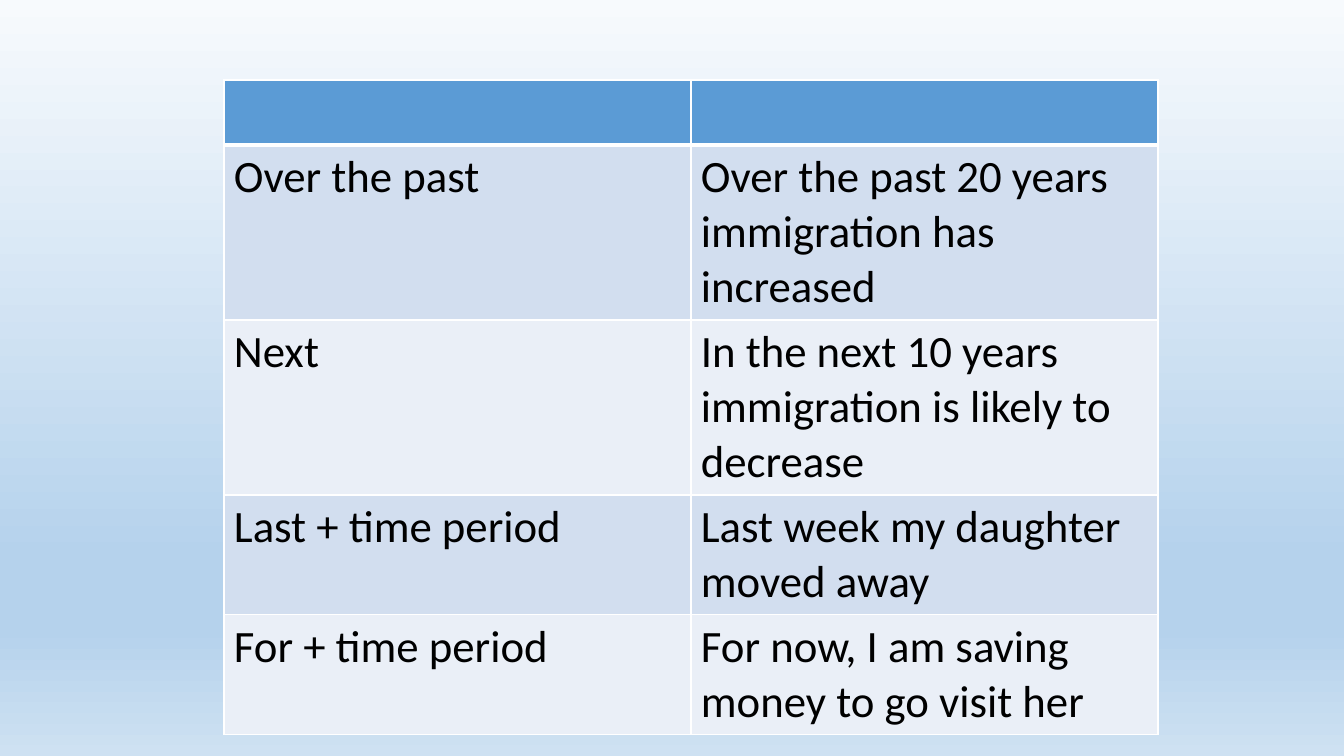
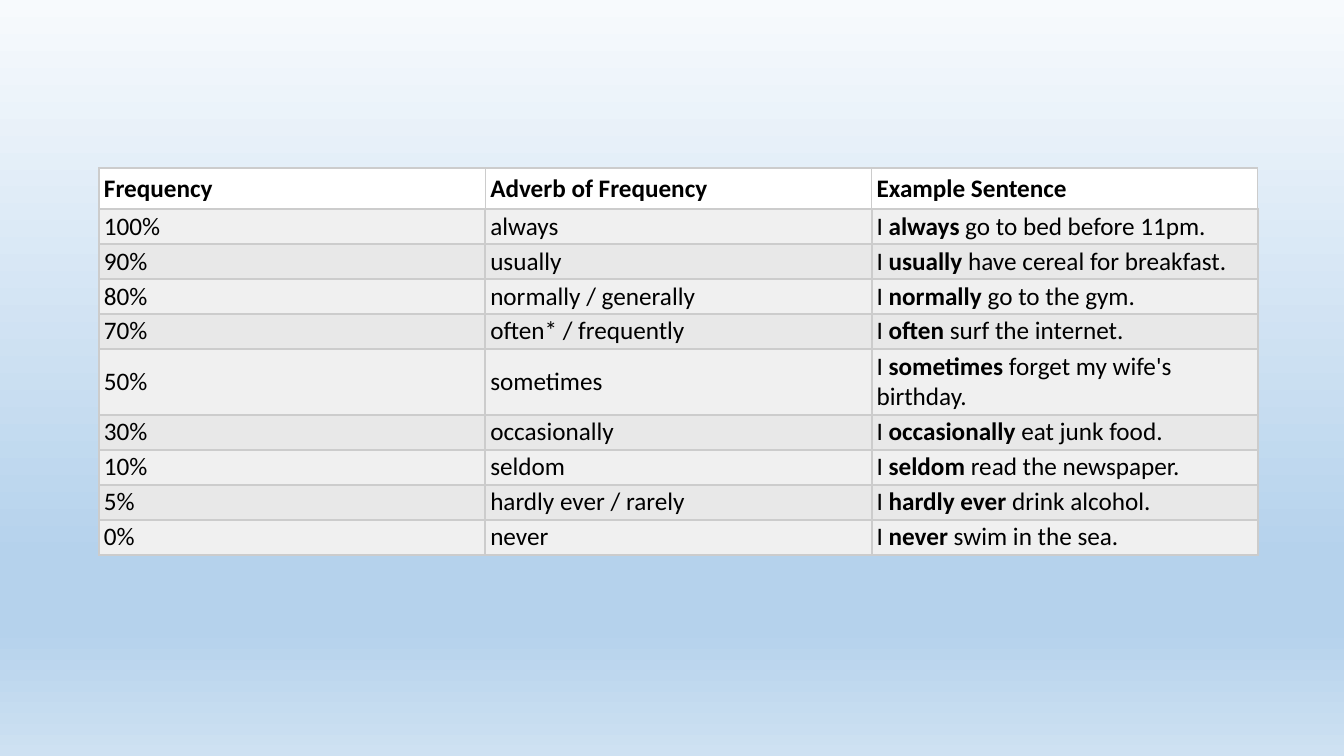
from lxml.etree import SubElement
from pptx import Presentation
from pptx.dml.color import RGBColor
from pptx.enum.text import MSO_ANCHOR
from pptx.oxml.ns import qn
from pptx.util import Emu, Pt

PX = 914400 / 100.8
FONT = "Calibri"
COLORS = {
    "text": "000000",
    "white": "FFFFFF",
    "blue": "5B9BD5",
    "blue_band": "D2DEEF",
    "blue_pale": "EAEFF7",
    "grid": "CCCCCC",
    "gray_pale": "F0F0F0",
    "gray_band": "E8E8E8",
}
BACKGROUND_STOPS = [(0, "F7FAFD"), (74, "B5D2EC"), (83, "B5D2EC"), (100, "CEE1F2")]

TIME_ROWS = [
    ("", ""),
    ("Over the past", "Over the past 20 years immigration has increased"),
    ("Next", "In the next 10 years immigration is likely to decrease"),
    ("Last + time period", "Last week my daughter moved away"),
    ("For + time period", "For now, I am saving money to go visit her"),
]
# Text between bars is bold.
FREQUENCY_ROWS = [
    ("Frequency", "Adverb of Frequency", "Example Sentence"),
    ("100%", "always", "I |always| go to bed before 11pm."),
    ("90%", "usually", "I |usually| have cereal for breakfast."),
    ("80%", "normally / generally", "I |normally| go to the gym."),
    ("70%", "often* / frequently", "I |often| surf the internet."),
    ("50%", "sometimes", "I |sometimes| forget my wife's birthday."),
    ("30%", "occasionally", "I |occasionally| eat junk food."),
    ("10%", "seldom", "I |seldom| read the newspaper."),
    ("5%", "hardly ever / rarely", "I |hardly ever| drink alcohol."),
    ("0%", "never", "I |never| swim in the sea."),
]

TIME_STYLE = {
    "size": 32, "anchor": MSO_ANCHOR.TOP, "border": "white",
    "header_fill": "blue", "bands": ("blue_band", "blue_pale"),
    "header_line": 1, "divider": 3, "body_line": 1,
    "header_margins": (10, 5, 10, 5), "body_margins": (10, 5, 10, 5),
}
FREQUENCY_STYLE = {
    "size": 18, "anchor": MSO_ANCHOR.MIDDLE, "border": "grid",
    "header_fill": "white", "bands": ("gray_pale", "gray_band"),
    "header_line": 1, "divider": 1.5, "body_line": 1.5,
    "header_margins": (5, 5, 10, 5), "body_margins": (5, 2, 5, 2),
}


def px(length):
    return Emu(round(length * PX))


def rgb(name):
    return RGBColor.from_string(COLORS[name])


def set_background(master):
    fill = master.background.fill
    fill.gradient()
    fill.gradient_angle = 270
    stops = master.element.find(".//" + qn("a:gsLst"))
    for stop in list(stops):
        stops.remove(stop)
    for percent, color in BACKGROUND_STOPS:
        stop = SubElement(stops, qn("a:gs"), pos=str(percent * 1000))
        SubElement(stop, qn("a:srgbClr"), val=color)


def set_borders(cell, color, widths):
    """Draw left, right, top and bottom lines; call before the fill is set."""
    properties = cell._tc.get_or_add_tcPr()
    for side, width in zip("LRTB", widths):
        line = SubElement(properties, qn(f"a:ln{side}"), w=str(Pt(width)))
        fill = SubElement(line, qn("a:solidFill"))
        SubElement(fill, qn("a:srgbClr"), val=COLORS[color])


def write_text(cell, text, size, bold):
    paragraph = cell.text_frame.paragraphs[0]
    font = paragraph.font
    font.name, font.size, font.bold = FONT, Pt(size), bold
    font.color.rgb = rgb("text")
    for index, part in enumerate(text.split("|")):
        if part:
            run = paragraph.add_run()
            run.text = part
            if index % 2:
                run.font.bold = True


def style_cell(cell, row_index, style):
    header = row_index == 0
    side = style["header_line"] if header else style["body_line"]
    top = style["divider"] if row_index == 1 else side
    bottom = style["divider"] if header else side
    set_borders(cell, style["border"], (side, side, top, bottom))
    cell.fill.solid()
    band = style["bands"][(row_index - 1) % 2]
    cell.fill.fore_color.rgb = rgb(style["header_fill"] if header else band)
    cell.vertical_anchor = style["anchor"]
    margins = style["header_margins" if header else "body_margins"]
    (cell.margin_left, cell.margin_top,
     cell.margin_right, cell.margin_bottom) = map(px, margins)


def add_table_slide(presentation, box, rows, heights, style):
    left, top, width = box
    slide = presentation.slides.add_slide(presentation.slide_layouts[6])
    columns = len(rows[0])
    table = slide.shapes.add_table(
        len(rows), columns, px(left), px(top), px(width), px(sum(heights))).table
    table.first_row = table.horz_banding = False
    for column in table.columns:
        column.width = px(width / columns)
    for row_index, (texts, height) in enumerate(zip(rows, heights)):
        table.rows[row_index].height = px(height)
        for column_index, text in enumerate(texts):
            cell = table.cell(row_index, column_index)
            style_cell(cell, row_index, style)
            write_text(cell, text, style["size"], row_index == 0)


def main():
    presentation = Presentation()
    presentation.slide_width, presentation.slide_height = px(1344), px(756)
    set_background(presentation.slide_master)
    time_heights = [55 * lines + 10 for lines in (1, 3, 3, 2, 2)]
    add_table_slide(presentation, (224, 80, 934), TIME_ROWS, time_heights, TIME_STYLE)
    frequency_heights = [41] + [35] * 4 + [66] + [35] * 4
    add_table_slide(presentation, (99, 168, 1159), FREQUENCY_ROWS,
                    frequency_heights, FREQUENCY_STYLE)
    presentation.save("out.pptx")


if __name__ == "__main__":
    main()
